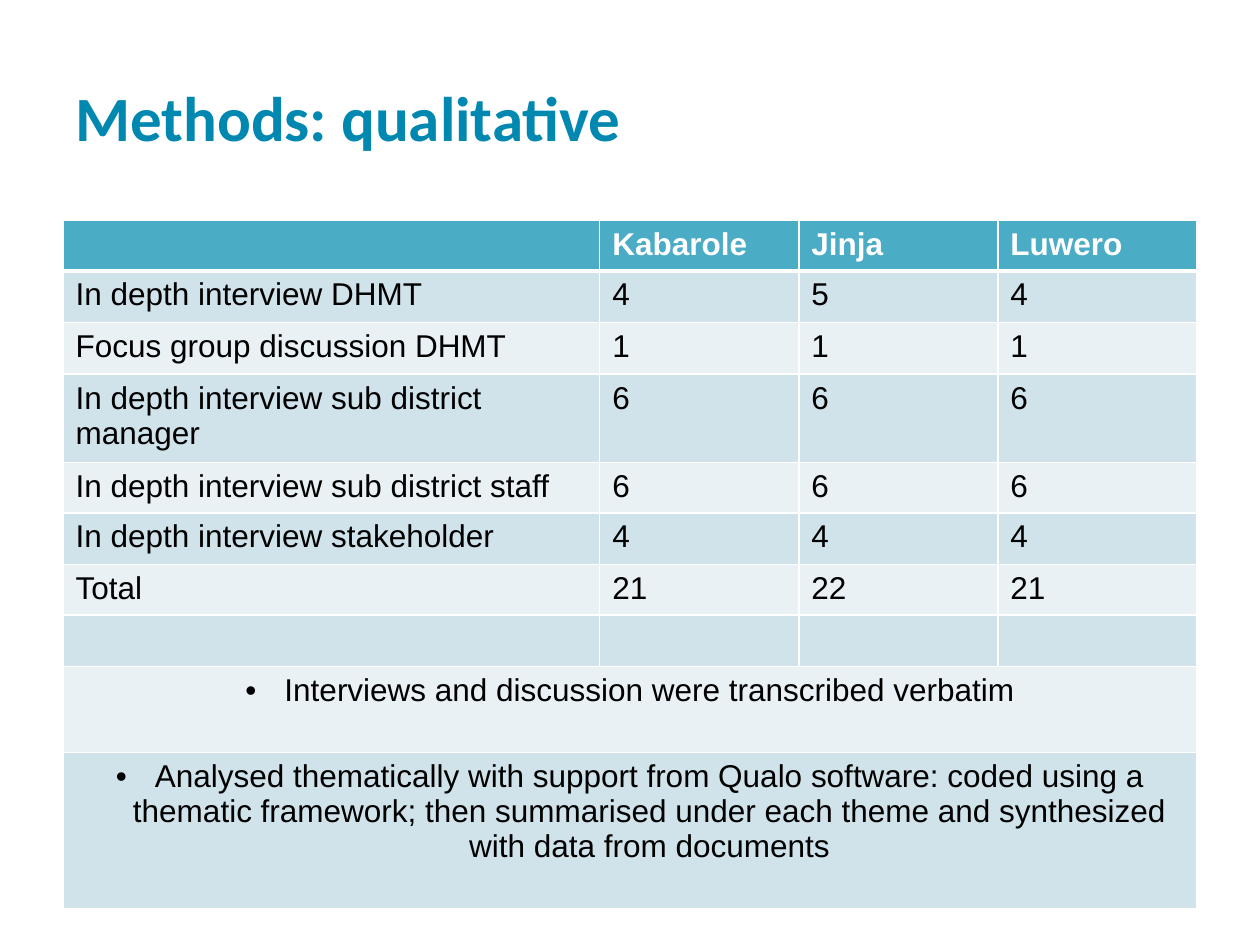
import pptx
import pptx.dml.color
import pptx.enum.text
import pptx.oxml
import pptx.oxml.ns
import pptx.util
from pptx.util import Inches

HEAD = ["", "Kabarole", "Jinja", "Luwero"]
COUNTS = [
    ["In depth interview DHMT", "4", "5", "4"],
    ["Focus group discussion DHMT", "1", "1", "1"],
    ["In depth interview sub district manager", "6", "6", "6"],
    ["In depth interview sub district staff", "6", "6", "6"],
    ["In depth interview stakeholder", "4", "4", "4"],
    ["Total", "21", "22", "21"],
    ["", "", "", ""],
]
NOTES = [
    "Interviews and discussion were transcribed verbatim",
    "Analysed thematically with support from Qualo software: coded using a "
    "thematic framework; then summarised under each theme and synthesized "
    "with data from documents",
]
WIDTHS = [4.26, 1.58, 1.58, 1.58]
HEIGHTS = [0.4, 0.41, 0.41, 0.66, 0.4, 0.41, 0.4, 0.41, 0.68, 1.24]
BANDS = ["E9F1F5", "D0E3EA"]


def color(code):
    return pptx.dml.color.RGBColor.from_string(code)


class Deck:
    def __init__(self):
        self.prs = pptx.Presentation()
        self.prs.slide_width, self.prs.slide_height = Inches(10), Inches(7.5)
        self.slide = self.prs.slides.add_slide(self.prs.slide_layouts[6])
        self.teal, self.blue = "4BACC6", "0088B0"
        self.white, self.black = "FFFFFF", "000000"

    def run(self, para, text, size, face, ink, bold=False):
        run = para.add_run()
        run.text = text
        font = run.font
        font.size, font.name, font.bold = pptx.util.Pt(size), face, bold
        font.color.rgb = color(ink)

    def title(self, text):
        box = self.slide.shapes.add_textbox(
            Inches(0.5), Inches(0.3), Inches(9), Inches(1.25))
        frame = box.text_frame
        frame.word_wrap = True
        frame.vertical_anchor = pptx.enum.text.MSO_ANCHOR.MIDDLE
        self.run(frame.paragraphs[0], text, 36, "Calibri", self.blue, True)

    def edges(self, cell, top, bottom):
        """Draw white borders, 1 pt at the sides; call before filling."""
        props = cell._tc.get_or_add_tcPr()
        for side, width in zip("LRTB", (1, 1, top, bottom)):
            props.append(pptx.oxml.parse_xml(
                f'<a:ln{side} {pptx.oxml.ns.nsdecls("a")} '
                f'w="{pptx.util.Pt(width)}"><a:solidFill>'
                f'<a:srgbClr val="{self.white}"/></a:solidFill></a:ln{side}>'))

    def bullet(self, para):
        para.alignment = pptx.enum.text.PP_ALIGN.CENTER
        props = para._p.get_or_add_pPr()
        props.set("marL", str(Inches(0.31)))
        props.set("indent", str(Inches(-0.31)))
        for tag in ('buFont {} typeface="Arial"', 'buChar {} char="•"'):
            props.append(pptx.oxml.parse_xml(
                f'<a:{tag.format(pptx.oxml.ns.nsdecls("a"))}/>'))

    def table(self, rows):
        """Lay out rows; a row of one text spans the full width."""
        grid = self.slide.shapes.add_table(
            len(rows), len(WIDTHS), Inches(0.5), Inches(1.75),
            Inches(sum(WIDTHS)), Inches(sum(HEIGHTS))).table
        grid.first_row = grid.horz_banding = False
        for col, width in zip(grid.columns, WIDTHS):
            col.width = Inches(width)
        for i, texts in enumerate(rows):
            grid.rows[i].height = Inches(HEIGHTS[i])
            head = i == 0
            for j in range(len(WIDTHS)):
                cell = grid.cell(i, j)
                self.edges(cell, 3 if i == 1 else 1, 3 if head else 1)
                cell.fill.solid()
                cell.fill.fore_color.rgb = color(
                    self.teal if head else BANDS[i % 2])
            if len(texts) == 1:
                grid.cell(i, 0).merge(grid.cell(i, len(WIDTHS) - 1))
            for j, text in enumerate(texts):
                para = grid.cell(i, j).text_frame.paragraphs[0]
                if len(texts) == 1:
                    self.bullet(para)
                if text:
                    ink = self.white if head else self.black
                    self.run(para, text, 18, "Arial", ink, head)


def main():
    deck = Deck()
    deck.title("Methods: qualitative")
    deck.table([HEAD] + COUNTS + [[note] for note in NOTES])
    deck.prs.save("out.pptx")


if __name__ == "__main__":
    main()
